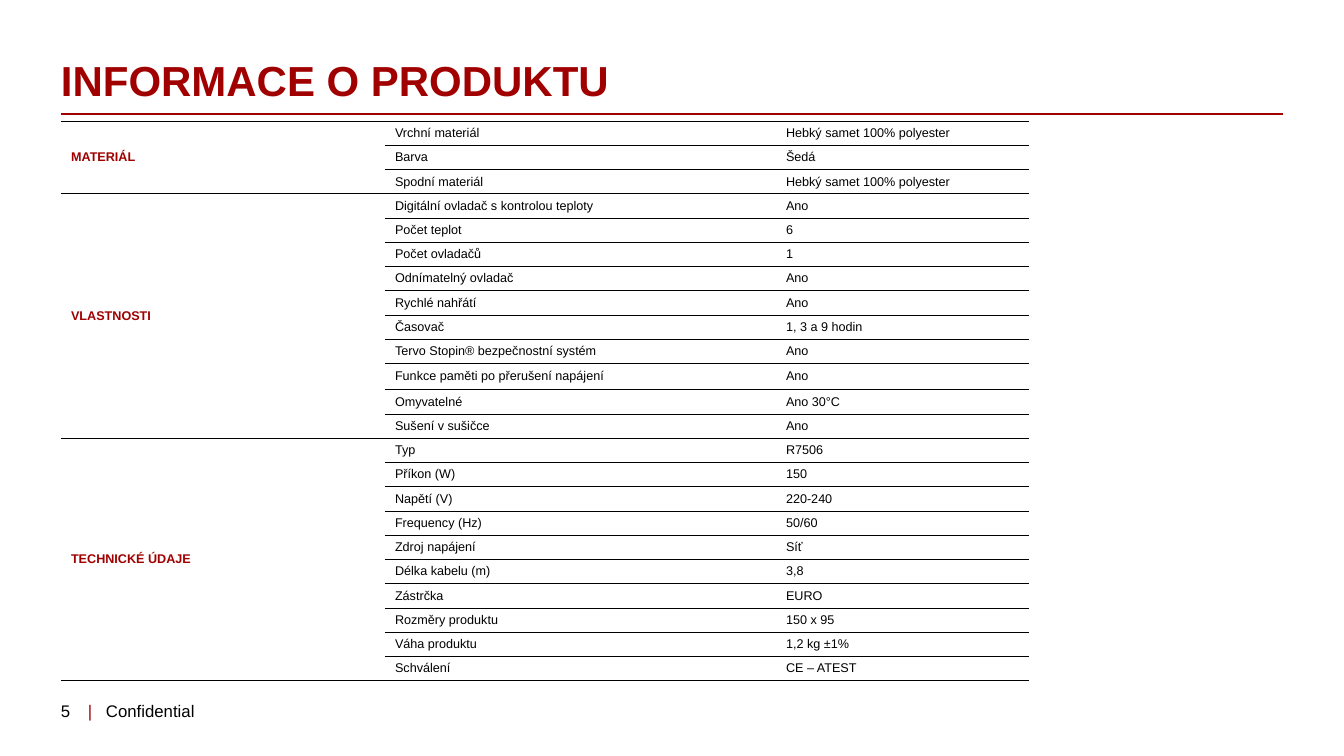
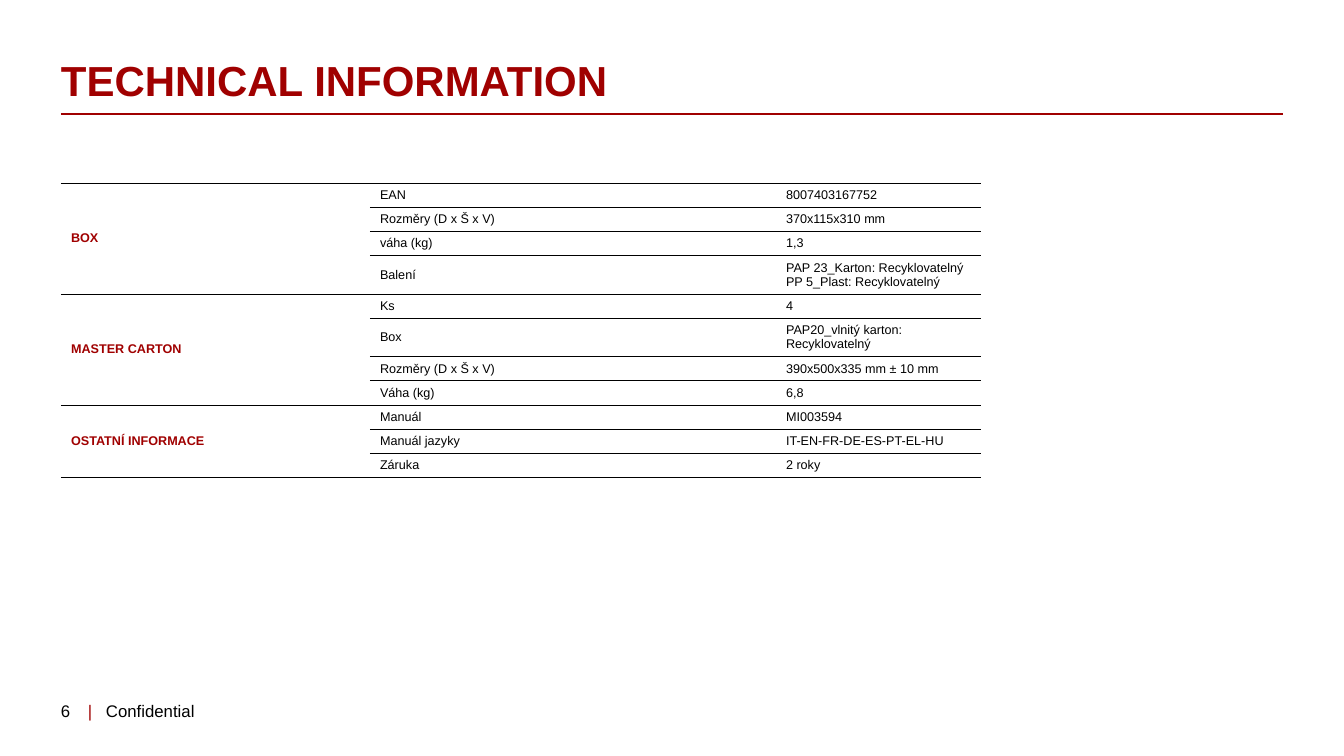
from dataclasses import dataclass

from lxml import etree
from pptx import Presentation
from pptx.dml.color import RGBColor
from pptx.enum.shapes import MSO_CONNECTOR
from pptx.enum.text import MSO_ANCHOR
from pptx.oxml.ns import qn
from pptx.util import Emu, Pt

STRAIGHT = MSO_CONNECTOR.STRAIGHT
TOP, MIDDLE = MSO_ANCHOR.TOP, MSO_ANCHOR.MIDDLE
EMU_PER_PX = 12192000 / 1344
NO_STYLE = "{2D5ABB26-0587-4C30-8999-92F81FD0307C}"


@dataclass(frozen=True)
class Theme:
    font: str = "Arial"
    red: str = "A00000"
    black: str = "000000"
    title_size: int = 30
    title_leading: int = 32
    footer_size: int = 12
    table_size: int = 9
    rule_width: float = 1
    border_width: float = 0.75


@dataclass(frozen=True)
class Group:
    name: str
    rows: list[tuple[str, str]]


@dataclass(frozen=True)
class Page:
    number: int
    title: str
    table_top: int
    table_height: int
    col_widths: tuple[int, int, int]
    groups: list[Group]
    tall_rows: dict[str, int]


THEME = Theme()
SLIDE_W, SLIDE_H = 1344, 756
LEFT, RULE_RIGHT, RULE_Y = 61, 1283, 114
ROW_H, CELL_PAD = 24, 3

PAGES = [
    Page(5, "INFORMACE O PRODUKTU", 121, 560, (324, 391, 253), [
        Group("MATERIÁL", [
            ("Vrchní materiál", "Hebký samet 100% polyester"),
            ("Barva", "Šedá"),
            ("Spodní materiál", "Hebký samet 100% polyester"),
        ]),
        Group("VLASTNOSTI", [
            ("Digitální ovladač s kontrolou teploty", "Ano"),
            ("Počet teplot", "6"),
            ("Počet ovladačů", "1"),
            ("Odnímatelný ovladač", "Ano"),
            ("Rychlé nahřátí", "Ano"),
            ("Časovač", "1, 3 a 9 hodin"),
            ("Tervo Stopin® bezpečnostní systém", "Ano"),
            ("Funkce paměti po přerušení napájení", "Ano"),
            ("Omyvatelné", "Ano 30°C"),
            ("Sušení v sušičce", "Ano"),
        ]),
        Group("TECHNICKÉ ÚDAJE", [
            ("Typ", "R7506"),
            ("Příkon (W)", "150"),
            ("Napětí (V)", "220-240"),
            ("Frequency (Hz)", "50/60"),
            ("Zdroj napájení", "Síť"),
            ("Délka kabelu (m)", "3,8"),
            ("Zástrčka", "EURO"),
            ("Rozměry produktu", "150 x 95"),
            ("Váha produktu", "1,2 kg ±1%"),
            ("Schválení", "CE – ATEST"),
        ]),
    ], {"Funkce paměti po přerušení napájení": 26}),
    Page(6, "TECHNICAL INFORMATION", 183, 295, (309, 406, 205), [
        Group("BOX", [
            ("EAN", "8007403167752"),
            ("Rozměry (D x Š x V)", "370x115x310 mm"),
            ("váha (kg)", "1,3"),
            ("Balení", "PAP 23_Karton: Recyklovatelný\nPP 5_Plast: Recyklovatelný"),
        ]),
        Group("MASTER CARTON", [
            ("Ks", "4"),
            ("Box", "PAP20_vlnitý karton: Recyklovatelný"),
            ("Rozměry (D x Š x V)", "390x500x335 mm ± 10 mm"),
            ("Váha (kg)", "6,8"),
        ]),
        Group("OSTATNÍ INFORMACE", [
            ("Manuál", "MI003594"),
            ("Manuál jazyky", "IT-EN-FR-DE-ES-PT-EL-HU"),
            ("Záruka", "2 roky"),
        ]),
    ], {"Balení": 38, "Box": 38}),
]


def px(n: int) -> Emu:
    return Emu(round(n * EMU_PER_PX))


def add_run(p, text: str, *, size: int, color: str = THEME.black, bold: bool = False) -> None:
    r = p.add_run()
    r.text = text
    r.font.name = THEME.font
    r.font.size = Pt(size)
    r.font.bold = bold
    r.font.color.rgb = RGBColor.from_string(color)


def write(tf, text: str, *, leading: int | None = None, **fmt) -> None:
    """Write one paragraph for each line of text."""
    for i, line in enumerate(text.split("\n")):
        p = tf.add_paragraph() if i else tf.paragraphs[0]
        if leading:
            p.line_spacing = Pt(leading)
        add_run(p, line, **fmt)


def add_box(s, x: int, y: int, w: int, h: int, anchor=TOP, bottom: int = 0):
    tf = s.shapes.add_textbox(px(x), px(y), px(w), px(h)).text_frame
    tf.word_wrap = True
    tf.vertical_anchor = anchor
    tf.margin_left = tf.margin_right = tf.margin_top = 0
    tf.margin_bottom = px(bottom)
    return tf


def add_frame(s, page: Page) -> None:
    """Draw the title, its rule and the footer."""
    rule = s.shapes.add_connector(STRAIGHT, px(LEFT), px(RULE_Y), px(RULE_RIGHT), px(RULE_Y))
    rule.line.color.rgb = RGBColor.from_string(THEME.red)
    rule.line.width = Pt(THEME.rule_width)
    etree.SubElement(rule._element.spPr, qn("a:effectLst"))

    write(add_box(s, LEFT, 60, 1223, 45, bottom=5), page.title, leading=THEME.title_leading,
          size=THEME.title_size, color=THEME.red, bold=True)
    write(add_box(s, LEFT, 701, 26, 30), str(page.number), size=THEME.footer_size)

    p = add_box(s, 88, 691, 115, 39, anchor=MIDDLE).paragraphs[0]
    tabs = etree.SubElement(p._p.get_or_add_pPr(), qn("a:tabLst"))
    etree.SubElement(tabs, qn("a:tab"), pos=str(px(18)), algn="l")
    add_run(p, "|", size=THEME.footer_size, color=THEME.red)
    add_run(p, "\tConfidential", size=THEME.footer_size)


def add_border(cell, *sides: str) -> None:
    """Add borders to a cell; sides are lnT and lnB, in that order."""
    tc_pr = cell._tc.get_or_add_tcPr()
    for i, side in enumerate(sides):
        ln = etree.Element(qn(f"a:{side}"), w=str(Pt(THEME.border_width)))
        fill = etree.SubElement(ln, qn("a:solidFill"))
        etree.SubElement(fill, qn("a:srgbClr"), val=THEME.black)
        tc_pr.insert(i, ln)


def fill_cell(cell, text: str, **fmt) -> None:
    cell.vertical_anchor = MIDDLE
    write(cell.text_frame, text, size=THEME.table_size, **fmt)
    add_border(cell, "lnT", "lnB")


def add_spec_table(s, page: Page) -> None:
    """Draw the groups, sharing out the table height in proportion to the row heights."""
    heights = [page.tall_rows.get(label, ROW_H) for g in page.groups for label, _ in g.rows]
    total = px(page.table_height)
    table = s.shapes.add_table(len(heights), len(page.col_widths), px(LEFT), px(page.table_top),
                               px(sum(page.col_widths)), total).table
    table.first_row = table.horz_banding = False
    table._tbl.tblPr.find(qn("a:tableStyleId")).text = NO_STYLE
    for col, width in zip(table.columns, page.col_widths):
        col.width = px(width)
    for row, height in zip(table.rows, heights):
        row.height = Emu(total * height // sum(heights))
    for cell in table.iter_cells():
        cell.fill.background()
        cell.margin_top = cell.margin_bottom = px(CELL_PAD)

    first = 0
    for group in page.groups:
        last = first + len(group.rows) - 1
        head = table.cell(first, 0)
        head.merge(table.cell(last, 0))
        fill_cell(head, group.name, color=THEME.red, bold=True)
        add_border(table.cell(last, 0), "lnB")
        for i, texts in enumerate(group.rows, first):
            for j, text in enumerate(texts, 1):
                fill_cell(table.cell(i, j), text)
        first = last + 1


def main() -> None:
    prs = Presentation()
    prs.slide_width, prs.slide_height = px(SLIDE_W), px(SLIDE_H)
    blank = prs.slide_layouts[6]
    for page in PAGES:
        s = prs.slides.add_slide(blank)
        add_frame(s, page)
        add_spec_table(s, page)
    prs.save("out.pptx")


if __name__ == "__main__":
    main()
